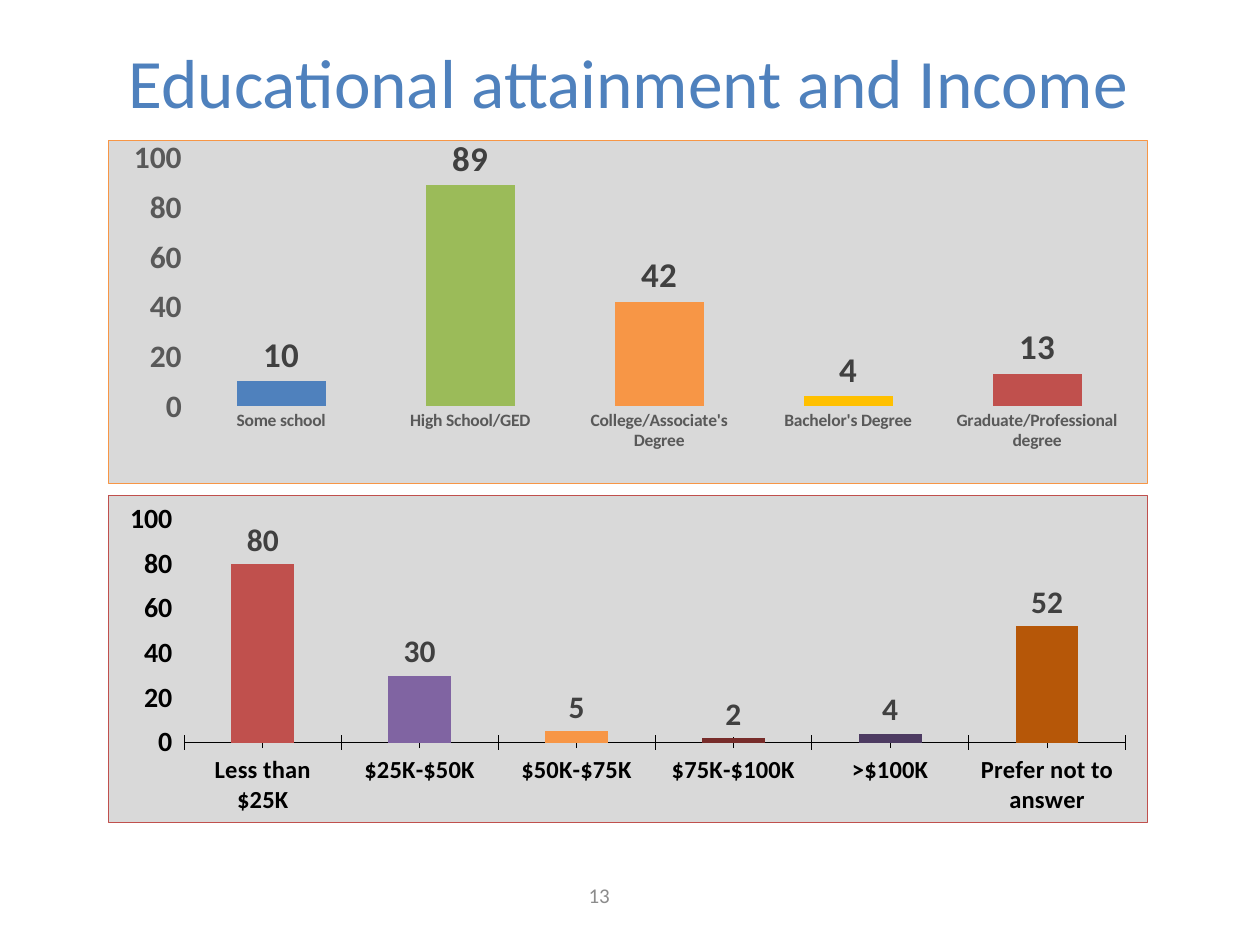
from dataclasses import dataclass
from typing import Any, Optional

from lxml.etree import SubElement, fromstring
from pptx import Presentation
from pptx.chart.data import CategoryChartData
from pptx.dml.color import RGBColor
from pptx.enum.chart import XL_CHART_TYPE, XL_LABEL_POSITION, XL_TICK_MARK
from pptx.enum.text import MSO_ANCHOR, PP_ALIGN
from pptx.oxml.ns import nsdecls, qn
from pptx.util import Cm, Pt

FONT = "Calibri"
PANEL_GRAY = "D9D9D9"
CHART_LEFT, CHART_WIDTH = 2.18, 20.96


@dataclass
class TextLabel:
    text: str
    box: tuple[float, float, float, float]
    size: float
    color: str


@dataclass
class AxisStyle:
    size: float
    color: str
    line: Optional[str]
    tick: Any


@dataclass
class ColumnChart:
    top: float
    height: float
    columns: list[tuple[str, int, str]]
    plot_area: tuple[float, float, float, float]
    category_axis: AxisStyle
    value_axis: AxisStyle
    line_width: float
    border: str
    label_size: float
    gap_width: int
    overlap: int


def rgb(color: str) -> RGBColor:
    return RGBColor.from_string(color)


def set_attributes(target: Any, values: dict[str, Any]) -> None:
    for name, value in values.items():
        setattr(target, name, value)


def set_font(font: Any, size: float, color: str, bold: bool = False) -> None:
    set_attributes(font, {"name": FONT, "size": Pt(size), "bold": bold})
    font.color.rgb = rgb(color)


def set_line(line: Any, color: Optional[str], width: float) -> None:
    if color is None:
        line.fill.background()
    else:
        line.color.rgb = rgb(color)
        line.width = Pt(width)


def add_label(slide: Any, label: TextLabel) -> None:
    shape = slide.shapes.add_textbox(*map(Cm, label.box))
    set_attributes(shape.text_frame, {"word_wrap": True, "vertical_anchor": MSO_ANCHOR.MIDDLE})
    paragraph = shape.text_frame.paragraphs[0]
    set_attributes(paragraph, {"text": label.text, "alignment": PP_ALIGN.CENTER})
    set_font(paragraph.font, label.size, label.color)


def area_format(border: Optional[str], width: float) -> Any:
    """Return the c:spPr element of a gray chart or plot area."""
    def solid(color: str) -> str:
        return f'<a:solidFill><a:srgbClr val="{color}"/></a:solidFill>'

    outline = solid(border) if border else "<a:noFill/>"
    return fromstring(
        f'<c:spPr {nsdecls("c", "a")}>{solid(PANEL_GRAY)}'
        f'<a:ln w="{Pt(width)}">{outline}</a:ln></c:spPr>'
    )


def place_plot_area(plot_area: Any, bounds: tuple[float, float, float, float]) -> None:
    for layout in plot_area.findall(qn("c:layout")):
        plot_area.remove(layout)
    layout = fromstring(f'<c:layout {nsdecls("c")}/>')
    manual = SubElement(layout, qn("c:manualLayout"))
    settings = {"layoutTarget": "inner", "xMode": "edge", "yMode": "edge",
                **dict(zip("xywh", bounds))}
    for name, value in settings.items():
        SubElement(manual, qn(f"c:{name}")).set("val", str(value))
    plot_area.insert(0, layout)


def style_axis(axis: Any, style: AxisStyle, width: float) -> None:
    set_attributes(axis, {"major_tick_mark": style.tick, "minor_tick_mark": style.tick})
    set_font(axis.tick_labels.font, style.size, style.color, bold=True)
    set_line(axis.format.line, style.line, width)


def add_column_chart(slide: Any, column_chart: ColumnChart) -> None:
    categories, values, colors = zip(*column_chart.columns)
    data = CategoryChartData()
    data.categories = categories
    data.add_series("Series 1", values)
    chart = slide.shapes.add_chart(
        XL_CHART_TYPE.COLUMN_CLUSTERED, Cm(CHART_LEFT), Cm(column_chart.top),
        Cm(CHART_WIDTH), Cm(column_chart.height), data,
    ).chart
    set_attributes(chart, {"has_title": False, "has_legend": False})
    set_font(chart.font, 10, "000000")

    width = column_chart.line_width
    style_axis(chart.category_axis, column_chart.category_axis, width)
    style_axis(chart.value_axis, column_chart.value_axis, width)
    set_attributes(chart.value_axis, {
        "minimum_scale": 0, "maximum_scale": 100, "major_unit": 20,
        "has_major_gridlines": True,
    })
    set_line(chart.value_axis.major_gridlines.format.line, PANEL_GRAY, width)

    plot = chart.plots[0]
    set_attributes(plot, {
        "gap_width": column_chart.gap_width, "overlap": column_chart.overlap,
        "vary_by_categories": False, "has_data_labels": True,
    })
    set_attributes(plot.data_labels, {
        "show_value": True, "position": XL_LABEL_POSITION.OUTSIDE_END,
    })
    set_font(plot.data_labels.font, column_chart.label_size, "404040", bold=True)
    for index, color in enumerate(colors):
        fill = plot.series[0].points[index].format.fill
        fill.solid()
        fill.fore_color.rgb = rgb(color)

    chart_element = chart.element.find(qn("c:chart"))
    chart_element.addnext(area_format(column_chart.border, width))
    plot_area = chart_element.find(qn("c:plotArea"))
    place_plot_area(plot_area, column_chart.plot_area)
    plot_area.append(area_format(None, width))


LABELS = [
    TextLabel("Educational attainment and Income", (1.24, 0.03, 22.86, 3.18), 39.6, "4F81BD"),
    TextLabel("13", (9.12, 17.53, 5.92, 1.02), 12, "8C8C8C"),
]

EDUCATION = ColumnChart(
    top=2.77, height=6.99,
    columns=[
        ("Some school", 10, "4F81BD"),
        ("High School/GED", 89, "9BBB59"),
        ("College/Associate's Degree", 42, "F79646"),
        ("Bachelor's Degree", 4, "FFC000"),
        ("Graduate/Professional degree", 13, "C0504D"),
    ],
    plot_area=(0.075, 0.05, 0.91, 0.725),
    category_axis=AxisStyle(10, "595959", PANEL_GRAY, XL_TICK_MARK.NONE),
    value_axis=AxisStyle(18, "595959", None, XL_TICK_MARK.NONE),
    line_width=0.75, border="F79646", label_size=20, gap_width=112, overlap=-17,
)

INCOME = ColumnChart(
    top=9.98, height=6.6,
    columns=[
        ("Less than $25K", 80, "C0504D"),
        ("$25K-$50K", 30, "8064A2"),
        ("$50K-$75K", 5, "F79646"),
        ("$75K-$100K", 2, "772C2A"),
        (">$100K", 4, "4D3B62"),
        ("Prefer not to answer", 52, "B65708"),
    ],
    plot_area=(0.073, 0.073, 0.906, 0.684),
    category_axis=AxisStyle(14, "000000", "000000", XL_TICK_MARK.CROSS),
    value_axis=AxisStyle(16, "000000", None, XL_TICK_MARK.CROSS),
    line_width=0.5, border="C0504D", label_size=18, gap_width=150, overlap=0,
)


def main() -> None:
    presentation = Presentation()
    set_attributes(presentation, {"slide_width": Cm(25.4), "slide_height": Cm(19.05)})
    slide = presentation.slides.add_slide(presentation.slide_layouts[6])
    for label in LABELS:
        add_label(slide, label)
    for column_chart in (EDUCATION, INCOME):
        add_column_chart(slide, column_chart)
    presentation.save("out.pptx")


if __name__ == "__main__":
    main()
